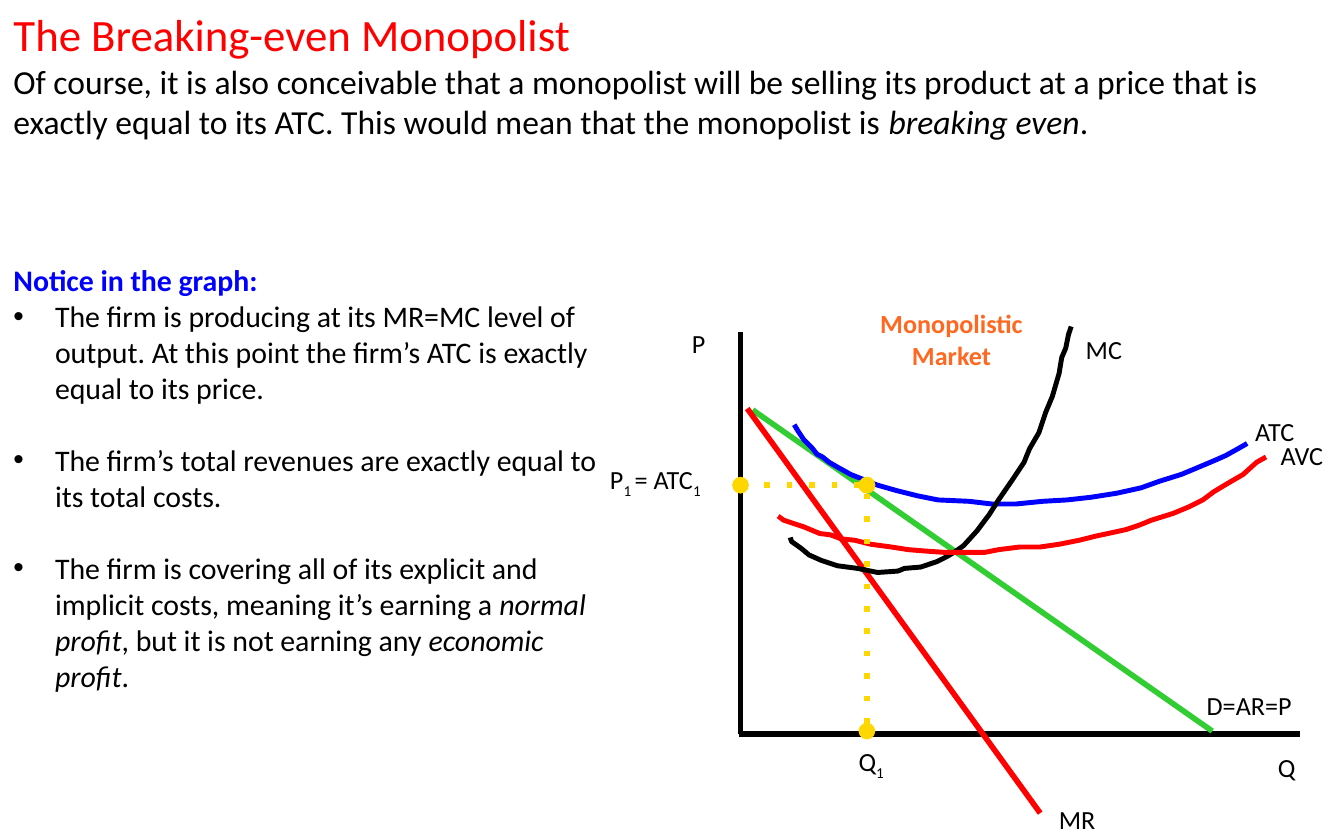
from lxml import etree
from pptx import Presentation
from pptx import util as u
from pptx.dml.color import RGBColor
from pptx.enum import shapes, text
from pptx.oxml.ns import qn

BLACK, RED, BLUE, GREEN, GOLD, ORANGE = "000000", "FF0000", "0000FF", "32CD32", "FFD700", "FF6820"
ITALIC, SUB = {"italic": True}, {"baseline": -25000}

INTRO = [
    ("Of course, it is also conceivable that a monopolist will be selling its product at a price "
     "that is exactly equal to its ATC. This would mean that the monopolist is ", {}),
    ("breaking even", ITALIC), (".", {}),
]
NOTES = [
    [("The firm is producing at its MR=MC level of output. At this point the firm’s ATC is "
      "exactly equal to its price.", {})],
    [("The firm’s total revenues are exactly equal to its total costs.", {})],
    [("The firm is covering all of its explicit and implicit costs, meaning it’s earning a ", {}),
     ("normal profit", ITALIC), (", but it is not earning any ", {}),
     ("economic profit", ITALIC), (".", {})],
]

ORIGIN_X, ORIGIN_Y = 5.51, 5.46
PRICE, QUANTITY = 3.61, 6.45
LINES = [
    ((ORIGIN_X, 2.47), (ORIGIN_X, ORIGIN_Y), BLACK),
    ((5.5, ORIGIN_Y), (9.67, ORIGIN_Y), BLACK),
    ((5.6, 3.05), (9.02, 5.44), GREEN),
    ((5.56, 3.04), (7.74, 6.05), RED),
]
GUIDES = [
    ((QUANTITY, 5.44), (QUANTITY, PRICE), GOLD),
    ((QUANTITY, PRICE), (ORIGIN_X, PRICE), GOLD),
]
ATC = [
    (5.91, 3.16), (5.94, 3.21), (5.98, 3.27), (6.04, 3.33), (6.08, 3.38), (6.12, 3.4),
    (6.17, 3.44), (6.24, 3.48), (6.33, 3.53), (6.43, 3.57), (6.53, 3.61), (6.67, 3.65),
    (6.83, 3.69), (6.98, 3.72), (7.21, 3.73), (7.38, 3.75), (7.56, 3.75), (7.76, 3.73),
    (7.94, 3.72), (8.12, 3.7), (8.31, 3.67), (8.49, 3.63), (8.63, 3.58), (8.79, 3.53),
    (8.91, 3.48), (9.03, 3.43), (9.12, 3.39), (9.21, 3.34), (9.28, 3.3),
]
MC = [
    (5.88, 4), (5.89, 4.03), (5.96, 4.08), (6.02, 4.13), (6.11, 4.17), (6.23, 4.21),
    (6.38, 4.23), (6.53, 4.26), (6.68, 4.25), (6.73, 4.23), (6.85, 4.22), (6.97, 4.18),
    (7.03, 4.15), (7.1, 4.11), (7.17, 4.06), (7.27, 3.95), (7.36, 3.83), (7.43, 3.72),
    (7.54, 3.56), (7.62, 3.44), (7.66, 3.34), (7.73, 3.22), (7.78, 3.07), (7.83, 2.95),
    (7.88, 2.78), (7.9, 2.66), (7.93, 2.59), (7.95, 2.49), (7.97, 2.43),
]
AVC = [
    (5.79, 3.84), (5.83, 3.87), (5.89, 3.89), (5.98, 3.92), (6.1, 3.97), (6.18, 3.98),
    (6.26, 4.01), (6.36, 4.02), (6.48, 4.05), (6.63, 4.07), (6.76, 4.09), (6.88, 4.1),
    (7.02, 4.11), (7.33, 4.11), (7.43, 4.09), (7.59, 4.07), (7.74, 4.07), (7.88, 4.05),
    (8.03, 4.02), (8.15, 3.99), (8.29, 3.96), (8.38, 3.94), (8.47, 3.91), (8.57, 3.87),
    (8.73, 3.82), (8.85, 3.77), (8.95, 3.72), (9.03, 3.66), (9.13, 3.6), (9.25, 3.53),
    (9.35, 3.44), (9.42, 3.4),
]
CURVES = [(ATC, BLUE), (MC, BLACK), (AVC, RED)]
LABELS = [
    ([("P", {})], 5.05, 2.39, 0.46),
    ([("Q", {})], 9.41, 5.54, 0.53),
    ([("D=AR=P", {})], 8.88, 5.08, 1.26),
    ([("MR", {})], 7.78, 5.93, 0.65),
    ([("ATC", {})], 9.24, 3.04, 0.65),
    ([("MC", {})], 7.98, 2.43, 0.6),
    ([("AVC", {})], 9.43, 3.22, 0.7),
    ([("P", {}), ("1 ", SUB), ("= ATC", {}), ("1", SUB)], 4.44, 3.4, 1.12),
    ([("Q", {}), ("1", SUB)], 6.29, 5.5, 0.53),
]


def color(value):
    return RGBColor.from_string(value)


def write(para, content, size=14, fill=BLACK, bold=False, align=text.PP_ALIGN.LEFT, after=0):
    para.alignment = align
    para.space_before, para.space_after = u.Pt(0), u.Pt(after)
    for words, style in content:
        span = para.add_run()
        span.text = words
        span.font.name, span.font.size = "Calibri", u.Pt(size)
        span.font.bold, span.font.italic = bold, style.get("italic", False)
        span.font.color.rgb = color(fill)
        if "baseline" in style:
            span.font._element.set("baseline", str(style["baseline"]))


def bullet(para, char=None, indent=0):
    props = para._p.get_or_add_pPr()
    props.set("marL", str(u.Inches(indent)))
    props.set("indent", str(-u.Inches(indent)))
    if char:
        etree.SubElement(props, qn("a:buFont"), typeface="Arial")
        etree.SubElement(props, qn("a:buChar"), char=char)
    else:
        etree.SubElement(props, qn("a:buNone"))


def frame_of(box):
    frame = box.text_frame
    frame.word_wrap = True
    frame.auto_size = text.MSO_AUTO_SIZE.SHAPE_TO_FIT_TEXT
    frame.vertical_anchor = text.MSO_ANCHOR.TOP
    return frame


def place(box, *lengths):
    box.left, box.top, box.width, box.height = map(u.Inches, lengths)
    return frame_of(box)


def add_label(group, content, left, top, width, height=0.34, **style):
    box = group.shapes.add_textbox(*map(u.Inches, (left, top, width, height)))
    write(frame_of(box).paragraphs[0], content, **style)


def add_line(group, start, end, fill, dotted=False):
    line = group.shapes.add_connector(
        shapes.MSO_CONNECTOR.STRAIGHT, *map(u.Inches, (*start, *end)))
    line.line.color.rgb, line.line.width = color(fill), u.Pt(3)
    if dotted:
        outline = line.line._get_or_add_ln()
        etree.SubElement(outline, qn("a:prstDash"), val="dot")
        for tip in ("a:headEnd", "a:tailEnd"):
            etree.SubElement(outline, qn(tip), type="oval")
    etree.SubElement(line._element.spPr, qn("a:effectLst"))


def add_curve(group, points, fill):
    start, *rest = [tuple(map(u.Inches, point)) for point in points]
    builder = group.shapes.build_freeform(*start)
    builder.add_line_segments(rest, close=False)
    curve = builder.convert_to_shape()
    curve.fill.background()
    curve.shadow.inherit = False
    curve.line.color.rgb, curve.line.width = color(fill), u.Pt(2.63)


deck = Presentation()
deck.slide_width, deck.slide_height = u.Inches(10), u.Inches(6.25)
page = deck.slides.add_slide(deck.slide_layouts[1])
title, body = page.placeholders

frame = place(title, 0, 0, 10, 1.11)
write(frame.paragraphs[0], [("The Breaking-even Monopolist", {})], size=24, fill=RED)
write(frame.add_paragraph(), INTRO, size=18)

frame = place(body, 0, 1.9, 4.58, 3.33)
heading = frame.paragraphs[0]
write(heading, [("Notice in the graph:", {})], size=16, fill=BLUE, bold=True)
bullet(heading)
for note in NOTES:
    para = frame.add_paragraph()
    write(para, note, size=16, after=0 if note is NOTES[-1] else 19.5)
    bullet(para, "•", 0.31)

graph = page.shapes.add_group_shape()
for line in LINES:
    add_line(graph, *line)
for curve in CURVES:
    add_curve(graph, *curve)
for guide in GUIDES:
    add_line(graph, *guide, dotted=True)
for label in LABELS:
    add_label(graph, *label)
add_label(graph, [("Monopolistic Market", {})], 6.25, 2.24, 1.66, 0.57,
          fill=ORANGE, bold=True, align=text.PP_ALIGN.CENTER)

deck.save("out.pptx")
